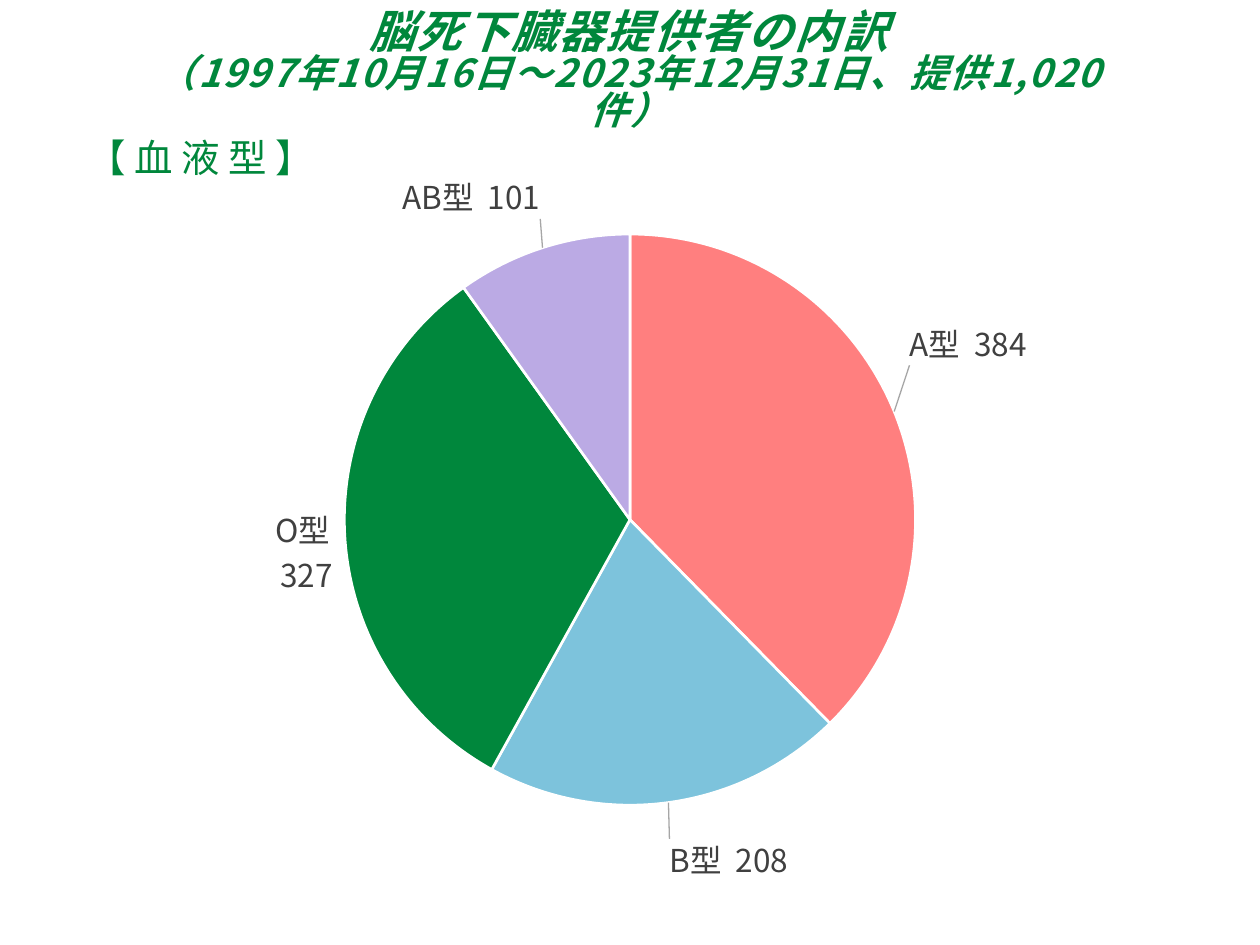
from copy import deepcopy
from dataclasses import dataclass

from pptx import Presentation
from pptx.chart.data import CategoryChartData
from pptx.dml.color import RGBColor
from pptx.enum.chart import XL_CHART_TYPE, XL_LABEL_POSITION
from pptx.enum.text import MSO_ANCHOR, PP_ALIGN
from pptx.oxml import parse_xml
from pptx.oxml.ns import nsdecls, qn
from pptx.util import Pt


@dataclass(frozen=True)
class Theme:
    green: str = "00873C"
    grey: str = "404040"
    rule: str = "A6A6A6"
    white: str = "FFFFFF"
    cjk: str = "Noto Sans CJK JP"
    latin: str = "Arial"
    head: int = 26
    sub: int = 22
    label: int = 18


T = Theme()

# Blood type, donors, slice colour, label shift as a share of the chart
TYPES = [
    ("A型", 384, "FF7F7F", (0.01, -0.06)),
    ("B型", 208, "7DC3DC", (0, 0.04)),
    ("O型", 327, T.green, (0, 0.02)),
    ("AB型", 101, "BBAAE4", (0, -0.03)),
]


def style(font, size, color, face):
    font.size = Pt(size)
    font.name = face
    font.color.rgb = RGBColor.from_string(color)


def write(para, text, size, color=T.green, face=T.cjk, bold=False,
          italic=False, gap=0):
    run = para.add_run()
    run.text = text
    style(run.font, size, color, face)
    run.font.bold, run.font.italic = bold, italic
    props = run._r.get_or_add_rPr()
    if gap:
        props.set("spc", str(gap * 100))
    props.append(parse_xml(f'<a:ea {nsdecls("a")} typeface="{T.cjk}"/>'))


def add_title(slide, box):
    title = slide.shapes.title
    title.left, title.top, title.width, title.height = map(Pt, box)
    frame = title.text_frame
    frame.word_wrap = True
    frame.vertical_anchor = MSO_ANCHOR.MIDDLE
    para = frame.paragraphs[0]
    para.alignment = PP_ALIGN.CENTER
    para.line_spacing = 0.8
    look = dict(bold=True, italic=True, gap=1)
    write(para, "脳死下臓器提供者の内訳", T.head, **look)
    para.add_line_break()
    write(para, "（1997年10月16日～2023年12月31日、提供1,020件）", T.sub, **look)


def add_topic(slide, box):
    frame = slide.shapes.add_textbox(*map(Pt, box)).text_frame
    frame.word_wrap = True
    write(frame.paragraphs[0], "【 血 液 型 】", T.sub, face=T.latin)


def add_labels(series):
    labels = series.data_labels
    labels.show_value = labels.show_category_name = True
    labels.position = XL_LABEL_POSITION.OUTSIDE_END
    style(labels.font, T.label, T.grey, T.cjk)
    root = labels._element
    ns = nsdecls("c", "a")
    root.find(qn("c:showBubbleSize")).addnext(
        parse_xml(f"<c:separator {ns}>  </c:separator>"))

    # Leader lines
    for lead in root.findall(qn("c:showLeaderLines")):
        root.remove(lead)
    root.append(parse_xml(f'<c:showLeaderLines {ns} val="1"/>'))
    root.append(parse_xml(
        f'<c:leaderLines {ns}><c:spPr><a:ln w="9525"><a:solidFill>'
        f'<a:srgbClr val="{T.rule}"/></a:solidFill></a:ln></c:spPr>'
        '</c:leaderLines>'))

    # Each label keeps the shared format and adds its own shift
    keep = ("txPr", "dLblPos", "showLegendKey", "showVal", "showCatName",
            "showSerName", "showPercent", "showBubbleSize", "separator")
    for i, (_, _, _, (x, y)) in enumerate(TYPES):
        item = parse_xml(
            f'<c:dLbl {ns}><c:idx val="{i}"/><c:layout><c:manualLayout>'
            f'<c:x val="{x}"/><c:y val="{y}"/>'
            '</c:manualLayout></c:layout></c:dLbl>')
        for name in keep:
            part = root.find(qn(f"c:{name}"))
            if part is not None:
                item.append(deepcopy(part))
        root.insert(i, item)


def add_pie(slide, box):
    data = CategoryChartData()
    data.categories = [row[0] for row in TYPES]
    data.add_series("Series 1", [row[1] for row in TYPES])
    chart = slide.shapes.add_chart(
        XL_CHART_TYPE.PIE, *map(Pt, box), data).chart
    chart.has_title = chart.has_legend = False
    style(chart.font, 10, "000000", T.cjk)
    plot = chart.plots[0]
    plot.vary_by_categories = True
    series = plot.series[0]

    # Slices
    for i, (_, _, color, _) in enumerate(TYPES):
        form = series.points[i].format
        form.fill.solid()
        form.fill.fore_color.rgb = RGBColor.from_string(color)
        form.line.color.rgb = RGBColor.from_string(T.white)
        form.line.width = Pt(1.5)
    add_labels(series)

    # Plot area
    area = chart._chartSpace.chart.plotArea
    for old in area.findall(qn("c:layout")):
        area.remove(old)
    spots = zip("xywh", (0.16, 0.07, 0.68, 0.86))
    area.insert(0, parse_xml(
        f'<c:layout {nsdecls("c")}><c:manualLayout>'
        '<c:layoutTarget val="inner"/>'
        '<c:xMode val="edge"/><c:yMode val="edge"/>'
        + "".join(f'<c:{key} val="{val}"/>' for key, val in spots)
        + '</c:manualLayout></c:layout>'))


def main():
    deck = Presentation()
    deck.slide_width, deck.slide_height = Pt(720), Pt(540)
    slide = deck.slides.add_slide(deck.slide_layouts[5])
    add_pie(slide, (120, 90, 480, 414))
    add_topic(slide, (43, 73, 216, 34))
    add_title(slide, (73, 10, 574, 63))
    deck.save("out.pptx")


if __name__ == "__main__":
    main()
